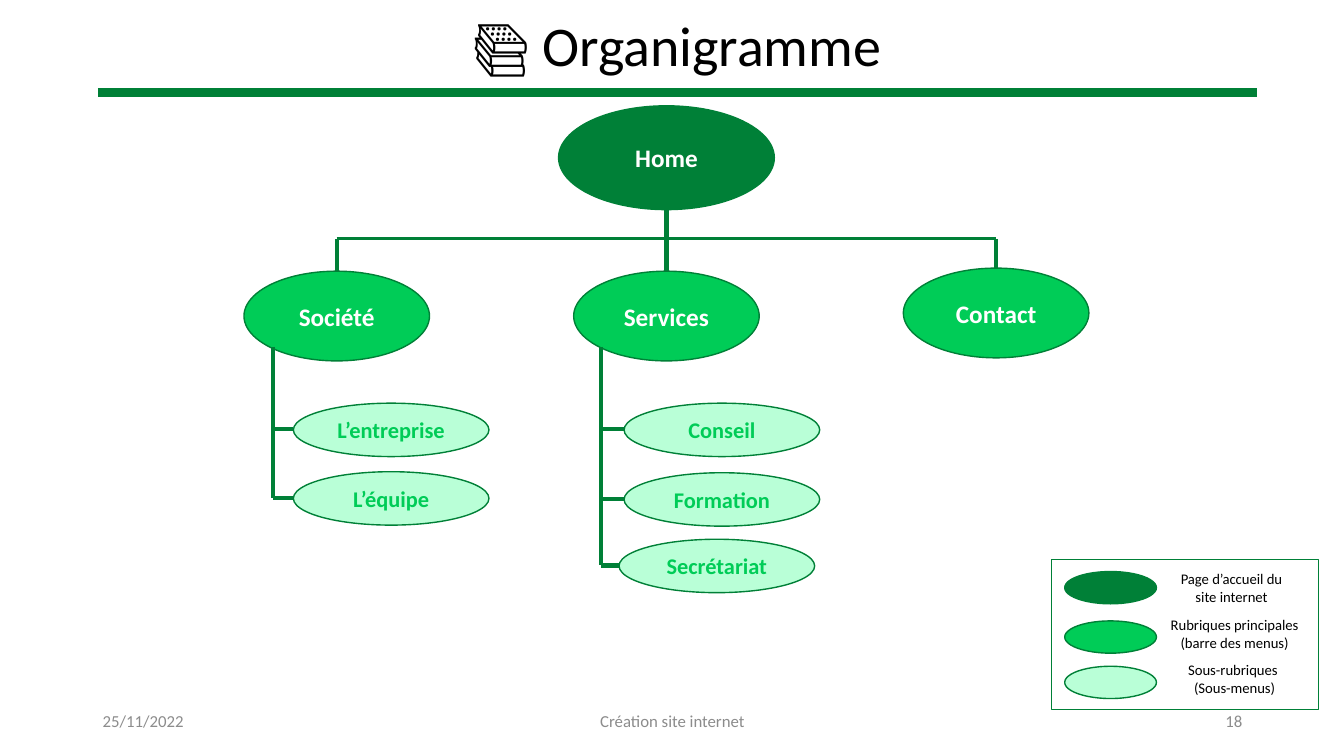
from pptx import Presentation
from pptx.dml.color import RGBColor
from pptx.enum import shapes, text
from pptx.oxml import parse_xml
from pptx.oxml.ns import nsdecls
from pptx.util import Pt

PX = 9144  # 100 px to the inch
DARK = RGBColor(0x00, 0x80, 0x37)
MID = RGBColor(0x00, 0xCC, 0x57)
PALE = RGBColor(0xB9, 0xFF, 0xD7)
WHITE = RGBColor(0xFF, 0xFF, 0xFF)
BLACK = RGBColor(0x00, 0x00, 0x00)
GREY = RGBColor(0x8C, 0x8C, 0x8C)
OVAL, RECT = shapes.MSO_SHAPE.OVAL, shapes.MSO_SHAPE.RECTANGLE
LEFT, CENTER, RIGHT = text.PP_ALIGN.LEFT, text.PP_ALIGN.CENTER, text.PP_ALIGN.RIGHT
TOP, MIDDLE = text.MSO_ANCHOR.TOP, text.MSO_ANCHOR.MIDDLE

prs = Presentation()
prs.slide_width, prs.slide_height = 1333 * PX, 750 * PX
s = prs.slides.add_slide(prs.slide_layouts[5])


def add_text(box, kind=None, words="", size=18, color=BLACK, bold=False,
             align=CENTER, anchor=MIDDLE, fill=None, line=None, spacing=None):
    """Write words into a shape of the given kind, a text box, or the title (kind "title")."""
    x, y, w, h = (v * PX for v in box)
    if kind == "title":
        sp = s.shapes.title
        sp.left, sp.top, sp.width, sp.height = x, y, w, h
    elif kind is None:
        sp = s.shapes.add_textbox(x, y, w, h)
    else:
        sp = s.shapes.add_shape(kind, x, y, w, h)
        sp.shadow.inherit = False
        if fill is None:
            sp.fill.background()
        else:
            sp.fill.solid()
            sp.fill.fore_color.rgb = fill
        if line is None:
            sp.line.fill.background()
        else:
            sp.line.color.rgb = line
            sp.line.width = Pt(1)
    tf = sp.text_frame
    tf.word_wrap = True
    tf.vertical_anchor = anchor
    for i, row in enumerate(words.split("\n") if words else []):
        p = tf.add_paragraph() if i else tf.paragraphs[0]
        p.alignment = align
        p.line_spacing = spacing
        r = p.add_run()
        r.text = row
        r.font.name, r.font.size, r.font.bold = "Calibri", Pt(size), bold
        r.font.color.rgb = color


def add_line(x1, y1, x2, y2, width=3):
    c = s.shapes.add_connector(shapes.MSO_CONNECTOR.STRAIGHT, x1 * PX, y1 * PX, x2 * PX, y2 * PX)
    c.line.color.rgb = DARK
    c.line.width = Pt(width)
    c._element.spPr.append(parse_xml(f"<a:effectLst {nsdecls('a')}/>"))


# Title and footer
add_text((97, -24, 1150, 145), "title", "📚 Organigramme", size=40, spacing=0.9)
add_line(97, 92, 1247, 92, width=6)
for x, w, words, align in [(92, 300, "25/11/2022", LEFT),
                           (442, 450, "Création site internet", CENTER),
                           (942, 300, "18", RIGHT)]:
    add_text((x, 695, w, 40), words=words, size=12, color=GREY, align=align)

# Home page and main sections
HOME_X, BUS_Y, STEP = 661, 237, 327
add_text((554, 105, 214, 103), OVAL, "Home", color=WHITE, bold=True, fill=DARK, line=DARK)
add_line(HOME_X - STEP, BUS_Y, HOME_X + STEP, BUS_Y, width=2.25)
for i, (words, top) in enumerate([("Société", 269), ("Services", 269), ("Contact", 266)]):
    x = HOME_X + (i - 1) * STEP
    add_text((x - 92, top, 184, 89), OVAL, words, color=WHITE, bold=True, fill=MID, line=DARK)
    add_line(x, 208 if x == HOME_X else BUS_Y, x, top)

# Sub-sections hang from a trunk under their section
branches = [
    (271, [("L’entreprise", 291, 400), ("L’équipe", 291, 468)]),
    (596, [("Conseil", 619, 400), ("Formation", 619, 469), ("Secrétariat", 614, 535)]),
]
for trunk, pages in branches:
    for words, x, y in pages:
        add_text((x, y, 194, 53), OVAL, words, size=16, color=MID, bold=True, fill=PALE, line=DARK)
        add_line(trunk, y + 26, x, y + 26)
    add_line(trunk, 344, trunk, pages[-1][2] + 26)

# Legend
for y, fill in [(567, DARK), (616, MID), (661, PALE)]:
    add_text((1056, y, 91, 32), OVAL, fill=fill, line=DARK)
add_text((1135, 563, 173, 40), OVAL, "Page d’accueil du site internet", size=10.5)
for y, words in [(606, "Rubriques principales (barre des menus)"),
                 (651, "Sous-rubriques \n(Sous-menus)")]:
    add_text((1140, y, 169, 45), words=words, size=10.5, anchor=TOP)
add_text((1043, 555, 265, 149), RECT, line=DARK)

prs.save("out.pptx")
